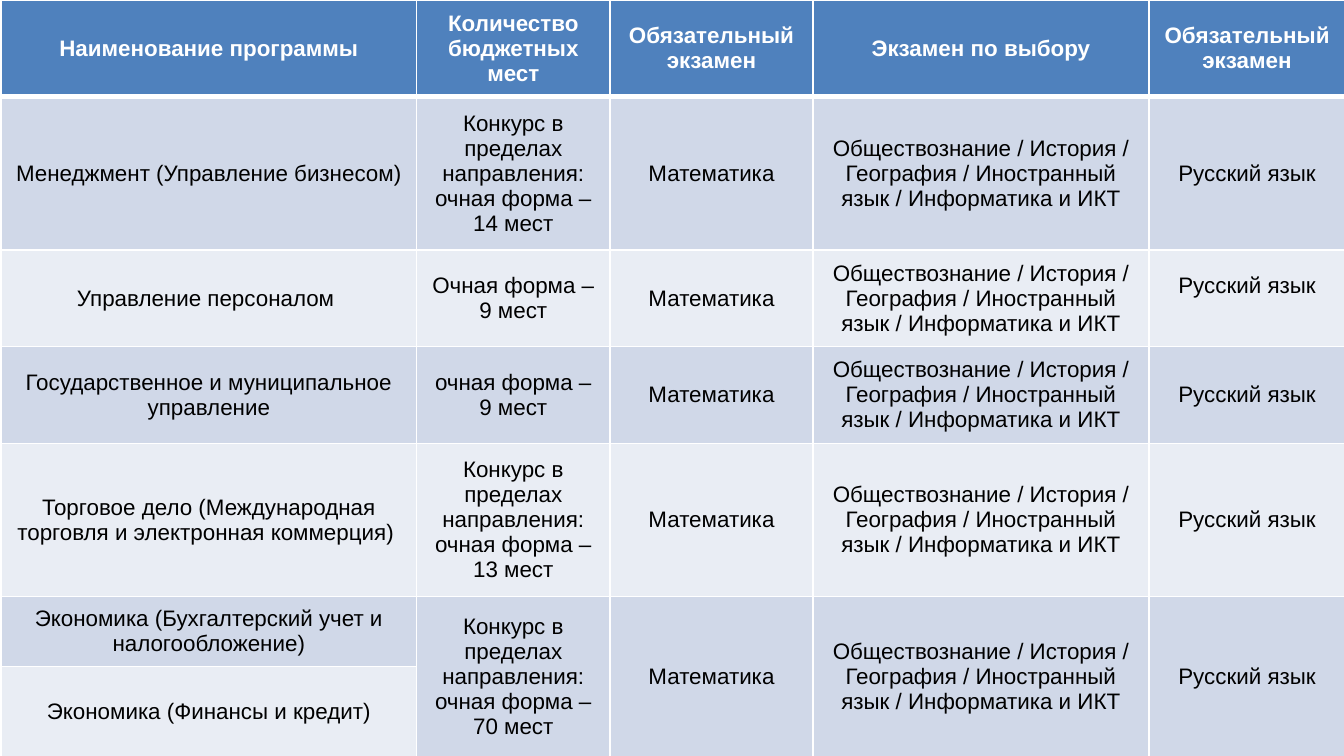
from typing import NamedTuple

from lxml.etree import SubElement
from pptx import Presentation
from pptx.dml.color import RGBColor
from pptx.enum.text import MSO_ANCHOR, PP_ALIGN
from pptx.oxml.ns import qn
from pptx.table import _Cell
from pptx.util import Inches, Pt

COLORS = {
    "head": "4F81BD",
    "dark": "D0D8E8",
    "light": "E9EDF4",
    "line": "FFFFFF",
    "title": "FFFFFF",
    "text": "000000",
}
FONT = "Arial"
WIDTHS = [3.09, 1.44, 1.51, 2.5, 1.46]
HEADS = [
    "Наименование программы",
    "Количество бюджетных мест",
    "Обязательный экзамен",
    "Экзамен по выбору",
    "Обязательный экзамен",
]
HEAD_HEIGHT = 0.72
EXAMS = [
    "Математика",
    "Обществознание / История / География / Иностранный язык / Информатика и ИКТ",
    "Русский язык",
]
CONTEST = "Конкурс в пределах направления: очная форма – "


class Program(NamedTuple):
    name: str
    height: float
    places: str = ""  # empty: shares the cells of the row above


PROGRAMS = [
    Program("Менеджмент (Управление бизнесом)", 1.14, CONTEST + "14 мест"),
    Program("Управление персоналом ", 0.72, "Очная форма – 9 мест"),
    Program("Государственное и муниципальное управление", 0.72, "очная форма – 9 мест"),
    Program("Торговое дело (Международная торговля и электронная коммерция) ",
            1.14, CONTEST + "13 мест"),
    Program("Экономика (Бухгалтерский учет и налогообложение)", 0.52, CONTEST + "70 мест"),
    Program("Экономика (Финансы и кредит)", 0.67),
]


def rule(cell: _Cell, row: int) -> None:
    """Draw the cell borders, with a thick line under the header row."""
    props = cell._tc.get_or_add_tcPr()
    thick = {0: "lnB", 1: "lnT"}.get(row)
    for side in ("lnL", "lnR", "lnT", "lnB"):
        width = Pt(3 if side == thick else 1)
        line = SubElement(props, qn(f"a:{side}"), w=str(width))
        fill = SubElement(line, qn("a:solidFill"))
        SubElement(fill, qn("a:srgbClr"), val=COLORS["line"])


def paint(cell: _Cell, row: int) -> None:
    rule(cell, row)
    band = "head" if row == 0 else "dark" if row % 2 else "light"
    cell.fill.solid()
    cell.fill.fore_color.rgb = RGBColor.from_string(COLORS[band])


def write(cell: _Cell, text: str, head: bool) -> None:
    cell.vertical_anchor = MSO_ANCHOR.MIDDLE
    para = cell.text_frame.paragraphs[0]
    para.alignment = PP_ALIGN.CENTER
    run = para.add_run()
    run.text = text
    font = run.font
    font.name, font.size, font.bold = FONT, Pt(12), head
    font.color.rgb = RGBColor.from_string(COLORS["title" if head else "text"])


def main() -> None:
    deck = Presentation()
    deck.slide_width = Inches(10)
    deck.slide_height = Inches(10 * 9 / 16)
    slide = deck.slides.add_slide(deck.slide_layouts[6])

    heights = [HEAD_HEIGHT] + [prog.height for prog in PROGRAMS]
    table = slide.shapes.add_table(
        len(heights), len(WIDTHS),
        Inches(0.01), Inches(0), Inches(9.99), Inches(5.62),
    ).table
    for col, width in zip(table.columns, WIDTHS):
        col.width = Inches(width)
    for row, height in zip(table.rows, heights):
        row.height = Inches(height)

    lines = [HEADS]
    for prog in PROGRAMS:
        lines.append([prog.name, prog.places, *EXAMS] if prog.places else [prog.name])
    for row, texts in enumerate(lines):
        for col in range(len(WIDTHS)):
            cell = table.cell(row, col)
            paint(cell, row)
            if col < len(texts):
                write(cell, texts[col], row == 0)
            else:
                table.cell(row - 1, col).merge(cell)

    # The language exam of the second program sits a little above the middle
    table.cell(2, 4).margin_bottom = Inches(0.24)
    deck.save("out.pptx")


if __name__ == "__main__":
    main()
